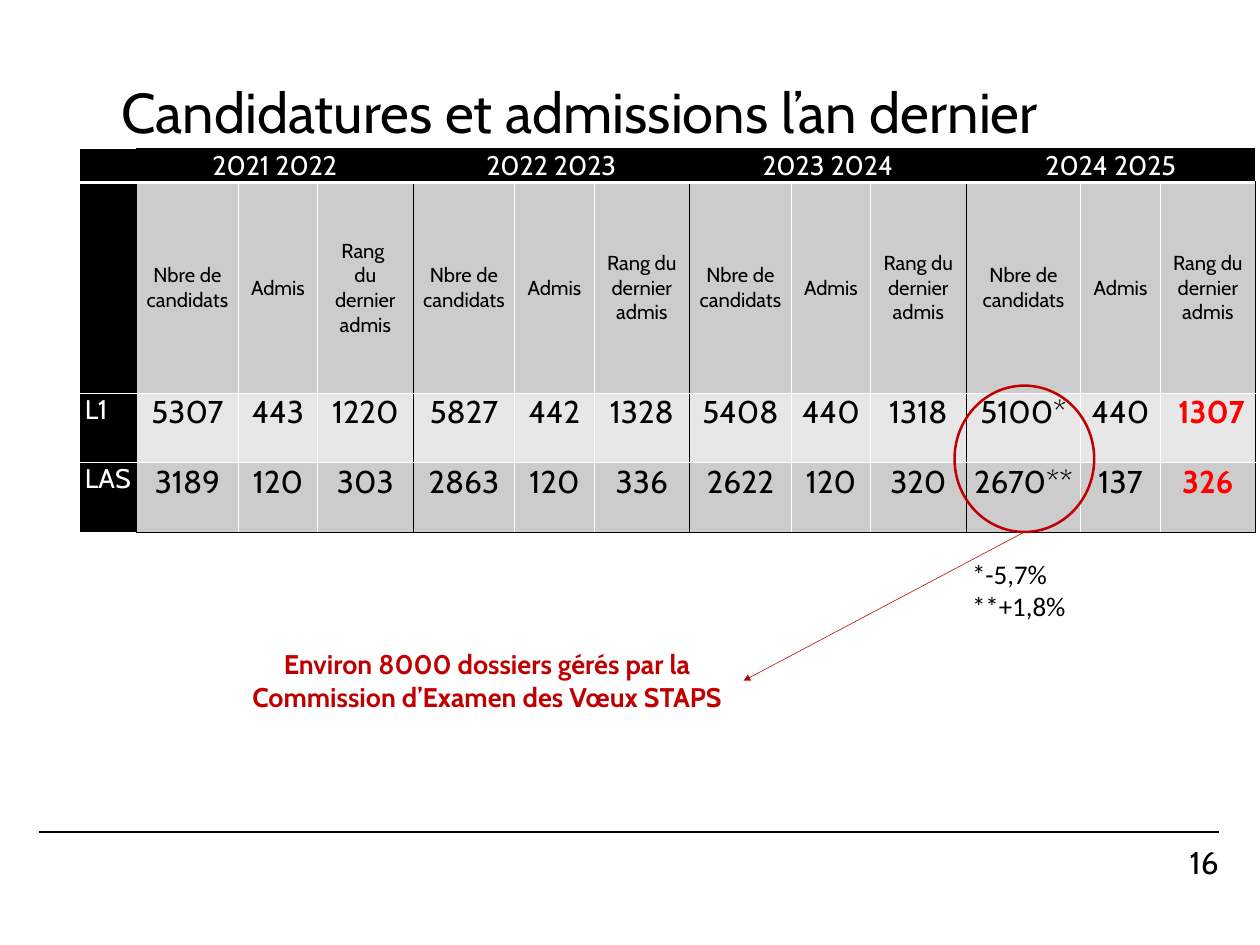
from lxml.etree import SubElement
from pptx import Presentation
from pptx.dml.color import RGBColor
from pptx.enum.shapes import MSO_CONNECTOR as Connector, MSO_SHAPE as Shape
from pptx.enum.text import MSO_ANCHOR as Anchor, MSO_AUTO_SIZE as AutoSize, PP_ALIGN as Align
from pptx.oxml.ns import qn
from pptx.util import Cm, Pt

BLACK = RGBColor(0x00, 0x00, 0x00)
WHITE = RGBColor(0xFF, 0xFF, 0xFF)
DARK_GREY = RGBColor(0xCC, 0xCC, 0xCC)
LIGHT_GREY = RGBColor(0xE7, 0xE7, 0xE7)
DARK_RED = RGBColor(0xC0, 0x00, 0x00)
RED = RGBColor(0xFF, 0x00, 0x00)

YEARS = ["2021 2022", "2022 2023", "2023 2024", "2024 2025"]
APPLICANTS = ["Nbre de candidats"]
ADMITTED = ["Admis"]
LAST_RANK = ["Rang du dernier", "admis"]
FIRST_YEAR_RANK = ["Rang ", "du dernier", "admis"]
RESULTS = {
    "L1": ["5307", "443", "1220", "5827", "442", "1328",
           "5408", "440", "1318", "5100*", "440", " 1307"],
    "LAS": ["3189", "120", "303", "2863", "120", "336",
            "2622", "120", "320", "2670**", "137", "326"],
}
PER_YEAR = 3
LABEL_WIDTH = 1.8
YEAR_WIDTHS = [3.2, 2.49, 3.0]
LAST_YEAR_WIDTHS = [3.61, 2.49, 3.0]
ROW_HEIGHTS = [1.07, 6.63, 2.18, 2.18]


def write(frame, lines, align=Align.LEFT, spacing=None, **font_format):
    """Fill a text frame with one paragraph per line, all formatted alike."""
    values = {"name": "Cabin", "bold": False, "color": BLACK, **font_format}
    color = values.pop("color")
    for index, line in enumerate(lines):
        para = frame.paragraphs[0] if index == 0 else frame.add_paragraph()
        para.alignment = align
        if spacing:
            para.line_spacing = spacing
        span = para.add_run()
        span.text = line
        for name, value in values.items():
            setattr(span.font, name, value)
        span.font.color.rgb = color


def add_text(page, box, lines, **format_values):
    shape = page.shapes.add_textbox(*map(Cm, box))
    shape.text_frame.word_wrap = True
    write(shape.text_frame, lines, **format_values)
    return shape


def add_line(page, start, end, color, width):
    line = page.shapes.add_connector(Connector.STRAIGHT, *map(Cm, start + end))
    line.line.color.rgb = color
    line.line.width = Pt(width)
    SubElement(line._element.spPr, qn("a:effectLst"))
    return line


def add_title(page, box):
    title = page.shapes.title
    title.left, title.top, title.width, title.height = map(Cm, box)
    frame = title.text_frame
    frame.word_wrap = True
    frame.auto_size = AutoSize.NONE
    frame.vertical_anchor = Anchor.MIDDLE
    write(frame, ["Candidatures et admissions l’an dernier"], spacing=0.9, size=Pt(50))


def set_borders(cell, **sides):
    """Draw each side, given as L, R, T, B, from a (colour, points) pair."""
    properties = cell._tc.get_or_add_tcPr()
    for side, (color, width) in sides.items():
        line = SubElement(properties, qn(f"a:ln{side}"), w=str(Pt(width)))
        fill = SubElement(line, qn("a:solidFill"))
        SubElement(fill, qn("a:srgbClr"), val=str(color))


def format_cell(cell, row, column):
    cell.margin_left = cell.margin_right = Cm(0.18)
    cell.margin_top = cell.margin_bottom = 0
    cell.vertical_anchor = Anchor.MIDDLE if row < 2 else Anchor.TOP
    thin_black, thin_white = (BLACK, 1), (WHITE, 1)
    is_label = column == 0
    is_header = row == 0
    starts_year = column % PER_YEAR == 1
    ends_year = column % PER_YEAR == 0
    is_last_row = row == len(ROW_HEIGHTS) - 1
    bottom = thin_black if is_last_row and not is_label else thin_white
    set_borders(
        cell,
        L=thin_black if starts_year else thin_white,
        R=thin_black if ends_year else thin_white,
        T=thin_black if is_header and not is_label else thin_white,
        B=(WHITE, 3) if is_header else bottom,
    )
    cell.fill.solid()
    if is_header or is_label:
        cell.fill.fore_color.rgb = BLACK
    else:
        cell.fill.fore_color.rgb = LIGHT_GREY if row == 2 else DARK_GREY


def add_admissions_table(page, left, top):
    widths = [LABEL_WIDTH] + YEAR_WIDTHS * (len(YEARS) - 1) + LAST_YEAR_WIDTHS
    frame = page.shapes.add_table(len(ROW_HEIGHTS), len(widths), Cm(left), Cm(top),
                                  Cm(sum(widths)), Cm(sum(ROW_HEIGHTS)))
    table = frame.table
    table.first_row = table.horz_banding = False
    for column, width in zip(table.columns, widths):
        column.width = Cm(width)
    for row, height in zip(table.rows, ROW_HEIGHTS):
        row.height = Cm(height)
    for row in range(len(ROW_HEIGHTS)):
        for column in range(len(widths)):
            format_cell(table.cell(row, column), row, column)

    for index, year in enumerate(YEARS):
        first = 1 + index * PER_YEAR
        head = table.cell(0, first)
        head.merge(table.cell(0, first + PER_YEAR - 1))
        write(head.text_frame, [year], align=Align.CENTER, size=Pt(24), color=WHITE)
        rank = FIRST_YEAR_RANK if index == 0 else LAST_RANK
        for offset, lines in enumerate([APPLICANTS, ADMITTED, rank]):
            write(table.cell(1, first + offset).text_frame, lines,
                  align=Align.CENTER, size=Pt(18))

    for row, (label, values) in enumerate(RESULTS.items(), start=2):
        write(table.cell(row, 0).text_frame, [label], size=Pt(24), color=WHITE)
        for column, value in enumerate(values, start=1):
            latest_rank = column == len(values)
            write(table.cell(row, column).text_frame, [value], align=Align.CENTER,
                  size=Pt(28), bold=latest_rank, color=RED if latest_rank else BLACK)


def add_applicants_callout(page, circle_box, caption_box):
    """Circle the latest applicants and point from there to the caption."""
    left, top, width, height = circle_box
    circle = page.shapes.add_shape(Shape.OVAL, *map(Cm, circle_box))
    circle.shadow.inherit = False
    circle.fill.background()
    circle.line.color.rgb = DARK_RED
    circle.line.width = Pt(2.25)

    caption = add_text(
        page, caption_box,
        ["Environ 8000 dossiers gérés par la Commission d’Examen des Vœux STAPS"],
        align=Align.CENTER, size=Pt(24), bold=True, color=DARK_RED)
    bottom = (left + width / 2, top + height)
    arrow = add_line(page, bottom, caption_box[:2], DARK_RED, 0.5)
    arrow.end_connect(caption, 3)
    SubElement(arrow.line._get_or_add_ln(), qn("a:tailEnd"), type="triangle")


def add_footer(page, left, top, width):
    add_line(page, (left, top), (left + width, top), BLACK, 2)
    number_width = 5.82
    box = (left + width - number_width, top + 0.33, number_width, 1.19)
    frame = add_text(page, box, ["16"], align=Align.RIGHT, size=Pt(28)).text_frame
    frame.vertical_anchor = Anchor.MIDDLE
    for side in ("left", "top", "right", "bottom"):
        setattr(frame, f"margin_{side}", 0)


def main():
    deck = Presentation()
    deck.slide_width, deck.slide_height = Cm(39.6), Cm(29.7)
    page = deck.slides.add_slide(deck.slide_layouts[5])
    add_footer(page, 1.22, 26.16, 37.08)
    add_title(page, (3.56, 1.14, 34.87, 4.95))
    add_admissions_table(page, 2.49, 4.67)
    add_applicants_callout(page, (30, 12.12, 4.39, 4.6), (7.24, 20.24, 16.13, 2.31))
    add_text(page, (30.3, 17.4, 4.39, 2.31), ["*-5,7%", "**+1,8%"],
             name="Calibri", size=Pt(24))
    deck.save("out.pptx")


if __name__ == "__main__":
    main()
